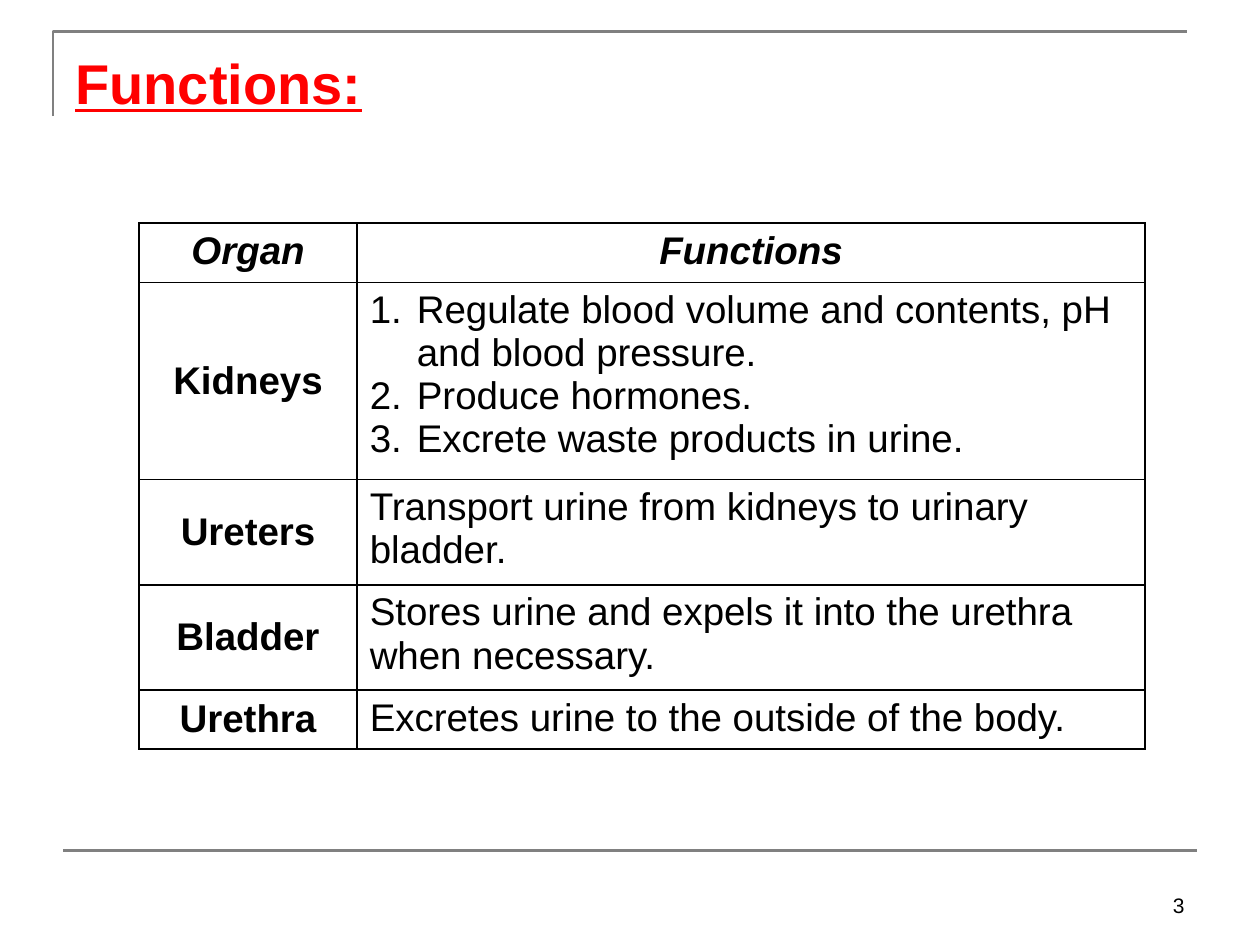
import pptx
import pptx.dml.color
import pptx.enum.text
import pptx.enum.shapes
import pptx.oxml
import pptx.oxml.ns
import pptx.util

Cm = pptx.util.Cm
Pt = pptx.util.Pt
ALIGN = pptx.enum.text.PP_ALIGN
ANCHOR = pptx.enum.text.MSO_ANCHOR
NAMESPACE = pptx.oxml.ns.nsdecls("a")

BLACK = "000000"
GRAY = "808080"
RED = "FF0000"

ORGANS = [
    ("Kidneys", ["Regulate blood volume and contents, pH and blood pressure.",
                 "Produce hormones.",
                 "Excrete waste products in urine."]),
    ("Ureters", ["Transport urine from kidneys to urinary bladder."]),
    ("Bladder", ["Stores urine and expels it into the urethra when necessary."]),
    ("Urethra", ["Excretes urine to the outside of the body."]),
]
COLUMN_WIDTHS = [4.4, 15.88]
ROW_HEIGHTS = [1.19, 3.97, 2.12, 2.12, 1.19]


def color(hex_string):
    return pptx.dml.color.RGBColor.from_string(hex_string)


def write(frame, lines, size, hex_string=BLACK, align=ALIGN.LEFT,
          bold=False, italic=False, underline=False):
    frame.text = "\n".join(lines)
    frame.word_wrap = True
    for paragraph in frame.paragraphs:
        paragraph.alignment = align
        for run in paragraph.runs:
            font = run.font
            font.name = "Arial"
            font.size = Pt(size)
            font.bold, font.italic, font.underline = bold, italic, underline
            font.color.rgb = color(hex_string)


def style_rule(rule):
    rule.line.color.rgb = color(GRAY)
    rule.line.width = Pt(1.5)


def add_title(slide, left, top, width, height):
    corner = slide.shapes.build_freeform(Cm(left), Cm(top + height))
    corner.add_line_segments(
        [(Cm(left), Cm(top)), (Cm(left + width), Cm(top))], close=False)
    bracket = corner.convert_to_shape()
    bracket.fill.background()
    bracket.shadow.inherit = False
    style_rule(bracket)

    title = slide.shapes.add_textbox(
        Cm(left + 0.2), Cm(top + 0.22), Cm(18.72), Cm(1.63))
    write(title.text_frame, ["Functions:"], 32, RED, bold=True, underline=True)


def add_footer(slide, left, top, width, height):
    rule = slide.shapes.add_connector(
        pptx.enum.shapes.MSO_CONNECTOR.STRAIGHT,
        Cm(left), Cm(top), Cm(left + width), Cm(top))
    style_rule(rule)
    rule._element.spPr.append(
        pptx.oxml.parse_xml(f"<a:effectLst {NAMESPACE}/>"))

    number_width = 5.92
    number = slide.shapes.add_textbox(
        Cm(left + width - number_width), Cm(top + 0.2),
        Cm(number_width), Cm(height - 0.2))
    write(number.text_frame, ["3"], 12, align=ALIGN.RIGHT)
    number.text_frame.vertical_anchor = ANCHOR.BOTTOM


def style_cell(cell):
    properties = cell._tc.get_or_add_tcPr()
    for side in ("lnL", "lnR", "lnT", "lnB"):
        properties.append(pptx.oxml.parse_xml(
            f'<a:{side} {NAMESPACE} w="{Pt(1)}"><a:solidFill>'
            f'<a:srgbClr val="{BLACK}"/></a:solidFill></a:{side}>'))
    cell.fill.background()


def number_paragraphs(frame):
    indent = Cm(0.95)
    for paragraph in frame.paragraphs:
        properties = paragraph._p.get_or_add_pPr()
        properties.set("marL", str(indent))
        properties.set("indent", str(-indent))
        properties.append(pptx.oxml.parse_xml(
            f'<a:buFont {NAMESPACE} typeface="+mj-lt"/>'))
        properties.append(pptx.oxml.parse_xml(
            f'<a:buAutoNum {NAMESPACE} type="arabicPeriod"/>'))


def add_organ_table(slide, left, top):
    table = slide.shapes.add_table(
        len(ROW_HEIGHTS), len(COLUMN_WIDTHS), Cm(left), Cm(top),
        Cm(sum(COLUMN_WIDTHS)), Cm(sum(ROW_HEIGHTS))).table
    table.first_row = False
    table.horz_banding = False
    for column, width in zip(table.columns, COLUMN_WIDTHS):
        column.width = Cm(width)
    for row, height in zip(table.rows, ROW_HEIGHTS):
        row.height = Cm(height)
    for cell in table.iter_cells():
        style_cell(cell)

    for column, heading in enumerate(["Organ", "Functions"]):
        write(table.cell(0, column).text_frame, [heading], 22,
              align=ALIGN.CENTER, bold=True, italic=True)
    for row, (organ, functions) in enumerate(ORGANS, start=1):
        organ_cell = table.cell(row, 0)
        write(organ_cell.text_frame, [organ], 22,
              align=ALIGN.CENTER, bold=True)
        organ_cell.vertical_anchor = ANCHOR.MIDDLE
        function_frame = table.cell(row, 1).text_frame
        write(function_frame, functions, 22)
        if len(functions) > 1:
            number_paragraphs(function_frame)


def main():
    presentation = pptx.Presentation()
    presentation.slide_width = Cm(25.4)
    presentation.slide_height = Cm(19.05)
    slide = presentation.slides.add_slide(presentation.slide_layouts[6])
    add_title(slide, 1.07, 0.64, 22.86, 1.7)
    add_organ_table(slide, 2.8, 4.5)
    add_footer(slide, 1.27, 17.15, 22.86, 1.47)
    presentation.save("out.pptx")


if __name__ == "__main__":
    main()
